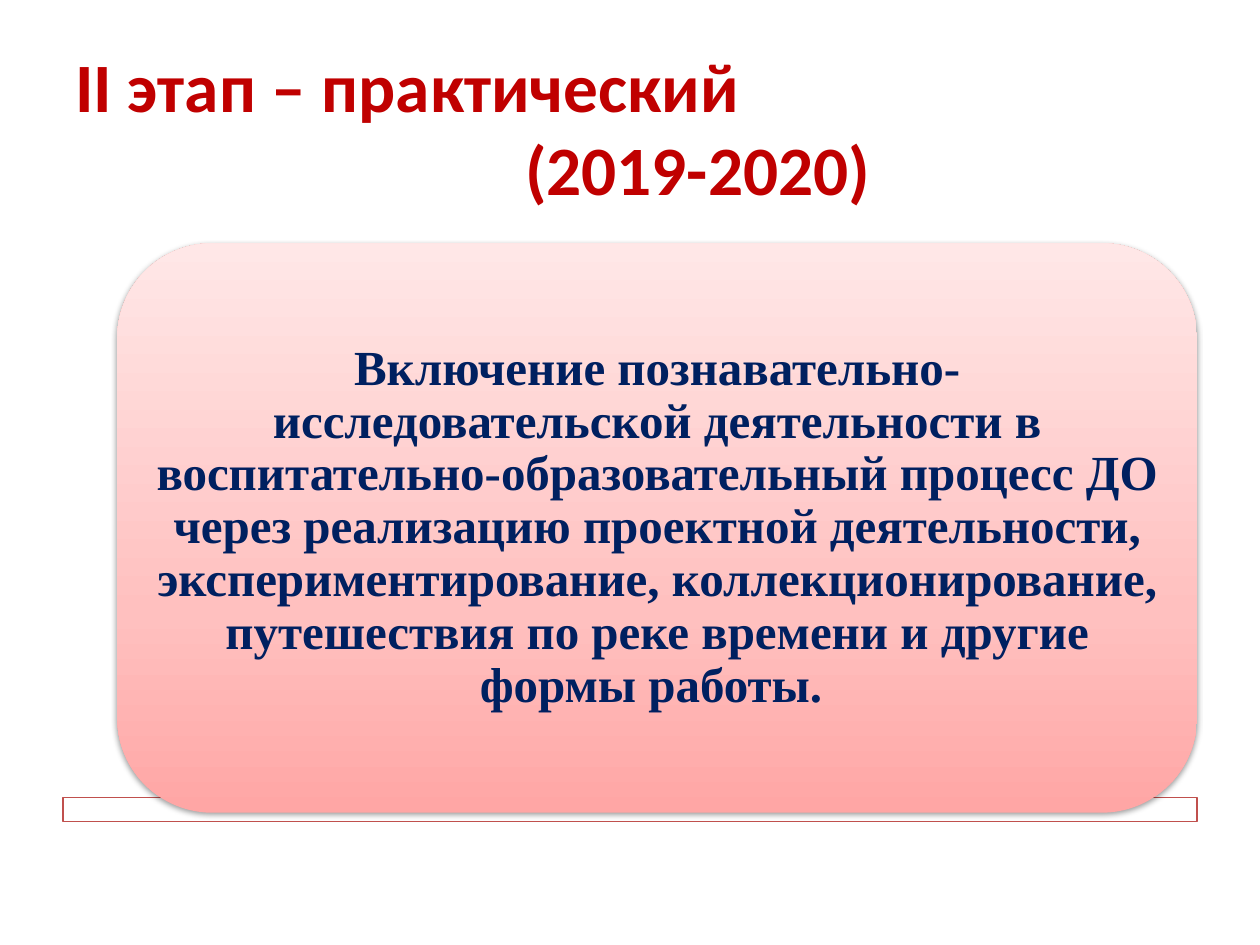
from copy import deepcopy
from lxml.etree import SubElement
from pptx import Presentation
from pptx.dml.color import RGBColor
from pptx.enum.shapes import MSO_SHAPE as Preset
from pptx.enum.text import MSO_ANCHOR as Anchor, PP_ALIGN as Align
from pptx.oxml.ns import qn
from pptx.util import Pt

COLORS = {
    "heading": "C00000", "body": "002060", "strip": "FFFFFF", "border": "C0504D",
    "bottom": "FFA6A5", "middle": "FFC0BF", "top": "FFE7E7", "shadow": "000000",
}


def color(name):
    return RGBColor.from_string(COLORS[name])


def write(paragraph, text, font_format, ink):
    run = paragraph.add_run()
    run.text = text
    for key, value in font_format.items():
        setattr(run.font, key, value)
    run.font.color.rgb = color(ink)


deck = Presentation()
deck.slide_width, deck.slide_height = Pt(720), Pt(540)
slide = deck.slides.add_slide(deck.slide_layouts[6])

heading = slide.shapes.add_textbox(Pt(36), Pt(32.4), Pt(648), Pt(79.2))
heading_frame = heading.text_frame
heading_frame.word_wrap = True
heading_frame.vertical_anchor = Anchor.MIDDLE
heading_font = {"name": "Calibri", "size": Pt(39.6), "bold": True}
for index, (text, indent) in enumerate([("II этап – практический", 0), ("(2019-2020)", 257)]):
    line = heading_frame.add_paragraph() if index else heading_frame.paragraphs[0]
    line.alignment = Align.LEFT
    line._p.get_or_add_pPr().set("marL", str(Pt(indent)))
    write(line, text, heading_font, "heading")

strip = slide.shapes.add_shape(Preset.RECTANGLE, Pt(36), Pt(455.8), Pt(648), Pt(13.7))
strip.shadow.inherit = False
strip.fill.solid()
strip.fill.fore_color.rgb = color("strip")
strip_color = strip._element.spPr.find(".//" + qn("a:srgbClr"))
SubElement(strip_color, qn("a:alpha"), val="90000")
strip.line.color.rgb = color("border")
strip.line.width = Pt(0.75)

card = slide.shapes.add_shape(Preset.ROUNDED_RECTANGLE, Pt(67), Pt(139), Pt(617), Pt(325.4))
card.shadow.inherit = False
card.line.fill.background()
card.fill.gradient()
card.fill.gradient_angle = 90
stop_list = card._element.spPr.find(".//" + qn("a:gsLst"))
stop_list.insert(1, deepcopy(stop_list[0]))
gradient = [("bottom", 0), ("middle", 0.35), ("top", 1)]
for stop, (name, position) in zip(card.fill.gradient_stops, gradient):
    stop.color.rgb = color(name)
    stop.position = position

effects = card._element.spPr.find(qn("a:effectLst"))
shadow = SubElement(effects, qn("a:outerShdw"), blurRad=str(Pt(3.1)), dist=str(Pt(1.6)),
                    dir="5400000", rotWithShape="0")
shadow_color = SubElement(shadow, qn("a:srgbClr"), val=COLORS["shadow"])
SubElement(shadow_color, qn("a:alpha"), val="38000")

card_format = {
    "word_wrap": True, "vertical_anchor": Anchor.MIDDLE,
    "margin_left": Pt(1.4), "margin_right": Pt(1.4), "margin_top": 0, "margin_bottom": 0,
}
for key, value in card_format.items():
    setattr(card.text_frame, key, value)
body = card.text_frame.paragraphs[0]
body.alignment = Align.CENTER
body.line_spacing = 0.9
write(
    body,
    "Включение познавательно-исследовательской деятельности в "
    "воспитательно-образовательный процесс ДО через реализацию проектной деятельности, "
    "экспериментирование, коллекционирование, путешествия по реке времени и другие "
    "формы работы. ",
    {"name": "Times New Roman", "size": Pt(28), "bold": True},
    "body",
)

deck.save("out.pptx")
